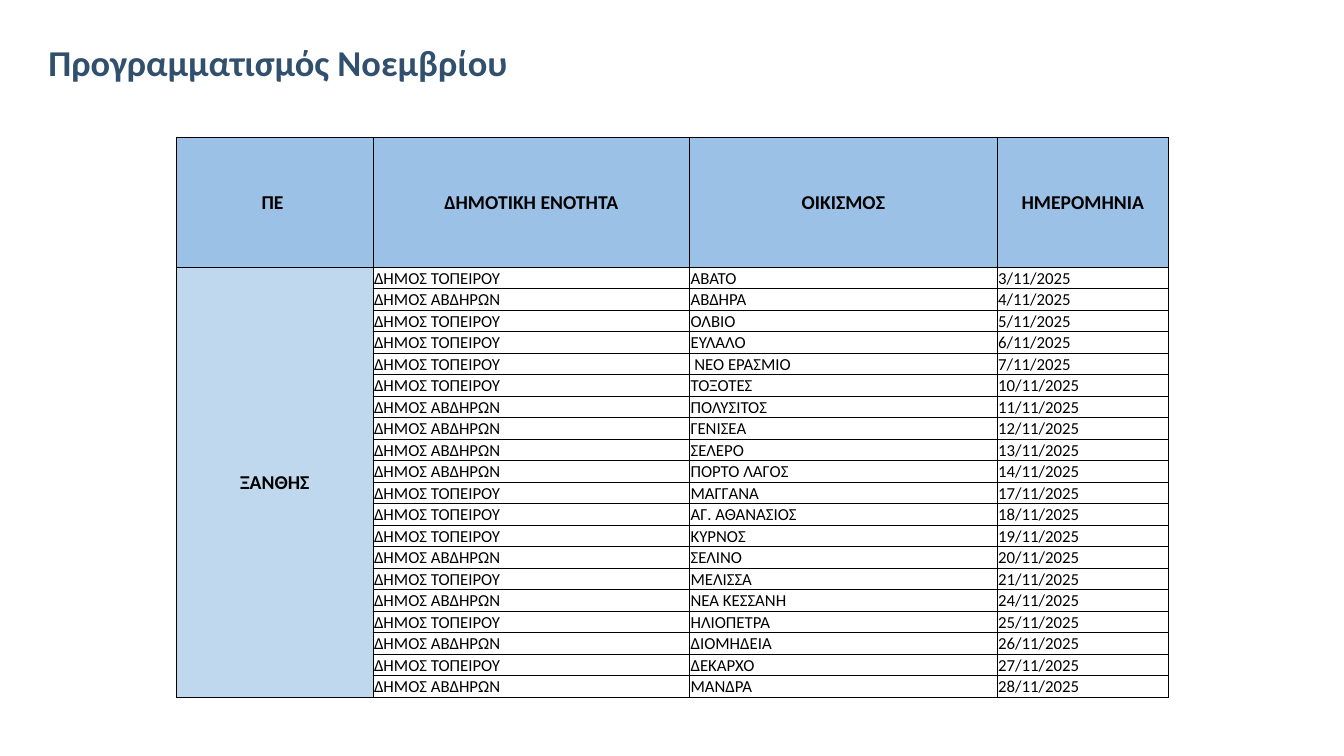
"""Build the November schedule slide with its table of settlements and dates."""
from lxml import etree
from pptx import Presentation
from pptx.dml.color import RGBColor
from pptx.enum.text import MSO_ANCHOR, PP_ALIGN
from pptx.oxml.ns import qn
from pptx.util import Inches, Pt

TITLE = "Προγραμματισμός Νοεμβρίου"
HEADERS = ("ΠΕ ", "ΔΗΜΟΤΙΚΗ ΕΝΟΤΗΤΑ", "ΟΙΚΙΣΜΟΣ", "ΗΜΕΡΟΜΗΝΙΑ")
REGION = "ΞΑΝΘΗΣ"
TOPEIROS = "ΔΗΜΟΣ ΤΟΠΕΙΡΟΥ"
ABDERA = "ΔΗΜΟΣ ΑΒΔΗΡΩΝ"
VISITS = [
    (TOPEIROS, "ΑΒΑΤΟ", "3/11/2025"),
    (ABDERA, "ΑΒΔΗΡΑ", "4/11/2025"),
    (TOPEIROS, "ΟΛΒΙΟ", "5/11/2025"),
    (TOPEIROS, "ΕΥΛΑΛΟ", "6/11/2025"),
    (TOPEIROS, " ΝΕΟ ΕΡΑΣΜΙΟ", "7/11/2025"),
    (TOPEIROS, "ΤΟΞΟΤΕΣ", "10/11/2025"),
    (ABDERA, "ΠΟΛΥΣΙΤΟΣ", "11/11/2025"),
    (ABDERA, "ΓΕΝΙΣΕΑ", "12/11/2025"),
    (ABDERA, "ΣΕΛΕΡΟ", "13/11/2025"),
    (ABDERA, "ΠΟΡΤΟ ΛΑΓΟΣ", "14/11/2025"),
    (TOPEIROS, "ΜΑΓΓΑΝΑ", "17/11/2025"),
    (TOPEIROS, "ΑΓ. ΑΘΑΝΑΣΙΟΣ", "18/11/2025"),
    (TOPEIROS, "ΚΥΡΝΟΣ", "19/11/2025"),
    (ABDERA, "ΣΕΛΙΝΟ", "20/11/2025"),
    (TOPEIROS, "ΜΕΛΙΣΣΑ", "21/11/2025"),
    (ABDERA, "ΝΕΑ ΚΕΣΣΑΝΗ", "24/11/2025"),
    (TOPEIROS, "ΗΛΙΟΠΕΤΡΑ", "25/11/2025"),
    (ABDERA, "ΔΙΟΜΗΔΕΙΑ", "26/11/2025"),
    (TOPEIROS, "ΔΕΚΑΡΧΟ", "27/11/2025"),
    (ABDERA, "ΜΑΝΔΡΑ", "28/11/2025"),
]

FONT = "Calibri"
NAVY = RGBColor(0x31, 0x50, 0x6D)
BLACK = RGBColor(0x00, 0x00, 0x00)
HEADER_BLUE = RGBColor(0x9B, 0xC2, 0xE6)
REGION_BLUE = RGBColor(0xC0, 0xD8, 0xED)
LEFT, CENTER = PP_ALIGN.LEFT, PP_ALIGN.CENTER
MIDDLE, BOTTOM = MSO_ANCHOR.MIDDLE, MSO_ANCHOR.BOTTOM

COLUMN_WIDTHS = (1.95, 3.14, 3.05, 1.7)
HEADER_HEIGHT, ROW_HEIGHT = 1.29, 0.21
TABLE_LEFT, TABLE_TOP = 1.75, 1.36


def write(text_frame, text, size, color=BLACK, bold=False, align=LEFT):
    """Put one formatted paragraph into a text frame and return it."""
    text_frame.text = text
    paragraph = text_frame.paragraphs[0]
    paragraph.alignment = align
    font = paragraph.runs[0].font
    font.name, font.size, font.bold = FONT, Pt(size), bold
    font.color.rgb = color
    return paragraph


def add_borders(cell):
    """Draw a thin black line on all four sides of a cell."""
    properties = cell._tc.get_or_add_tcPr()
    for position, side in enumerate(("a:lnL", "a:lnR", "a:lnT", "a:lnB")):
        line = etree.Element(qn(side), w=str(Pt(0.5)))
        fill = etree.SubElement(line, qn("a:solidFill"))
        etree.SubElement(fill, qn("a:srgbClr"), val=str(BLACK))
        properties.insert(position, line)


def format_cell(cell, fill=None):
    """Set the fill, margins, anchor and borders of a cell."""
    if fill is None:
        cell.fill.background()
    else:
        cell.fill.solid()
        cell.fill.fore_color.rgb = fill
    cell.margin_left = cell.margin_right = cell.margin_top = Inches(0.01)
    cell.margin_bottom = 0
    cell.vertical_anchor = MIDDLE
    add_borders(cell)


def add_title(slide):
    """Place and format the title placeholder."""
    title = slide.shapes.title
    title.left, title.top = Inches(0.36), Inches(0.25)
    title.width, title.height = Inches(12.4), Inches(0.64)
    frame = title.text_frame
    frame.word_wrap = True
    frame.vertical_anchor = BOTTOM
    frame.margin_left, frame.margin_right = Inches(0.12), Inches(0.1)
    frame.margin_top = frame.margin_bottom = Inches(0.05)
    write(frame, TITLE, 26, color=NAVY, bold=True).line_spacing = 0.9


def add_schedule(slide):
    """Add the schedule table with one merged region cell."""
    height = HEADER_HEIGHT + ROW_HEIGHT * len(VISITS)
    table = slide.shapes.add_table(
        len(VISITS) + 1, len(HEADERS), Inches(TABLE_LEFT), Inches(TABLE_TOP),
        Inches(sum(COLUMN_WIDTHS)), Inches(height)).table
    table.first_row = table.horz_banding = False
    for column, width in zip(table.columns, COLUMN_WIDTHS):
        column.width = Inches(width)
    for index, row in enumerate(table.rows):
        row.height = Inches(ROW_HEIGHT if index else HEADER_HEIGHT)

    for index, header in enumerate(HEADERS):
        cell = table.cell(0, index)
        write(cell.text_frame, header, 14, bold=True, align=CENTER)
        format_cell(cell, HEADER_BLUE)
    for row_index, visit in enumerate(VISITS, start=1):
        format_cell(table.cell(row_index, 0), REGION_BLUE)
        for column_index, text in enumerate(visit, start=1):
            cell = table.cell(row_index, column_index)
            write(cell.text_frame, text, 12)
            format_cell(cell)
    region = table.cell(1, 0)
    region.merge(table.cell(len(VISITS), 0))
    write(region.text_frame, REGION, 14, bold=True, align=CENTER)


def main():
    """Create the presentation and save it."""
    presentation = Presentation()
    presentation.slide_width, presentation.slide_height = Inches(13.33), Inches(7.5)
    slide = presentation.slides.add_slide(presentation.slide_layouts[5])
    add_title(slide)
    add_schedule(slide)
    presentation.save("out.pptx")


if __name__ == "__main__":
    main()
